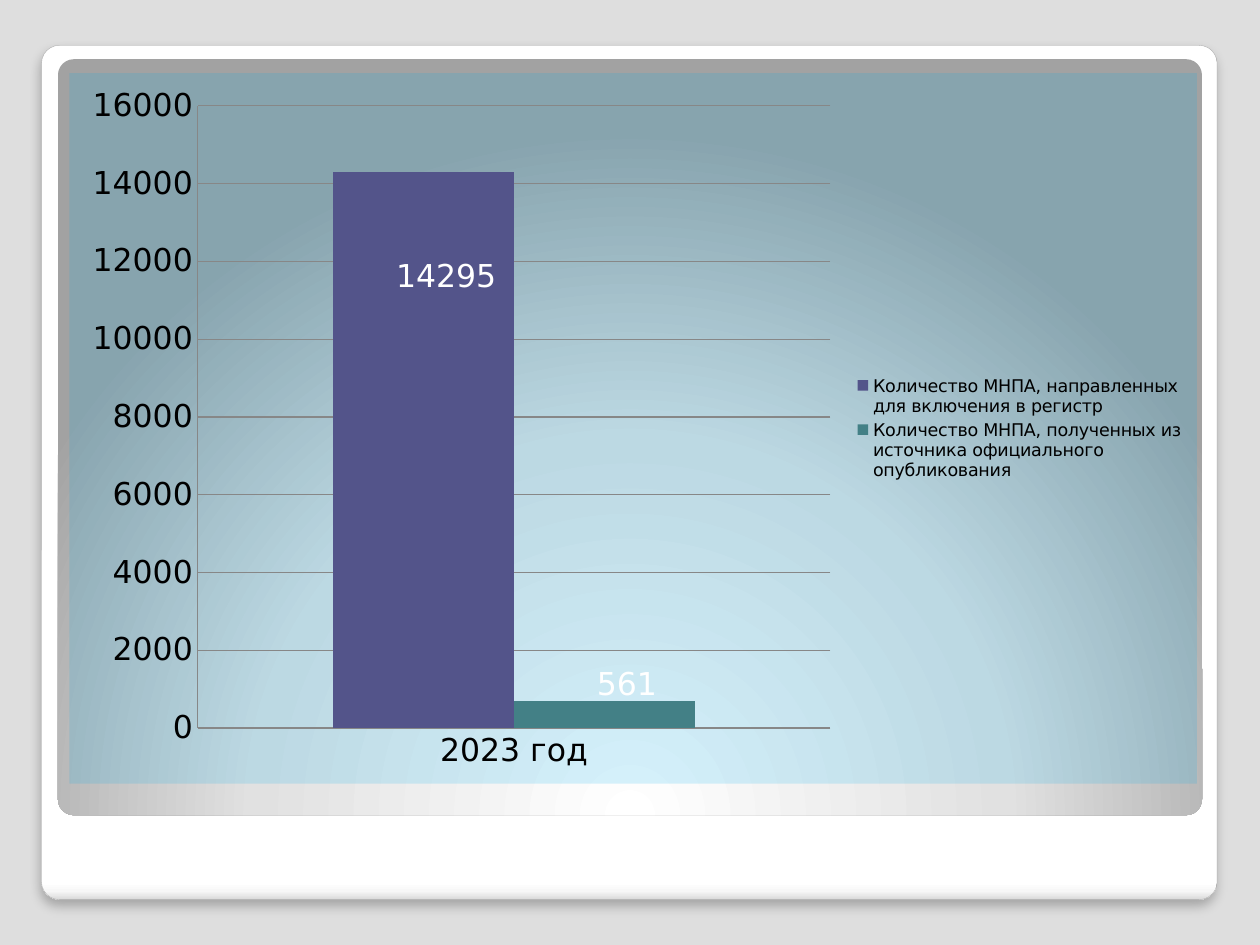
"""Build a slide with a framed column chart of municipal legal acts in 2023."""
from dataclasses import dataclass

from lxml.etree import SubElement
from pptx import Presentation
from pptx.chart.data import CategoryChartData
from pptx.dml.color import RGBColor
from pptx.enum.chart import XL_CHART_TYPE, XL_LABEL_POSITION, XL_LEGEND_POSITION, XL_TICK_MARK
from pptx.enum.shapes import MSO_SHAPE
from pptx.oxml import parse_xml
from pptx.oxml.ns import nsdecls, qn
from pptx.util import Inches, Pt


@dataclass(frozen=True)
class Theme:
    """Colours, font and type sizes of the slide."""
    font: str = "DejaVu Sans"
    background: str = "DEDEDE"
    border: str = "A4A4A4"
    text: str = "000000"
    label: str = "FFFFFF"
    grid: str = "878787"
    tint: str = "00B0F0"
    size: int = 18
    legend_size: int = 10
    card: tuple = ((0, "FFFFFF"), (98, "FFFFFF"), (99, "F7F7F7"), (100, "DADADA"))
    panel: tuple = ((0, "FFFFFF"), (55, "E1E1E1"), (100, "A2A2A2"))


THEME = Theme()
LINEAR = '<a:lin ang="5400000" scaled="0"/>'
RADIAL = '<a:path path="circle"><a:fillToRect l="50000" t="175000" r="50000" b="-75000"/></a:path>'
CHART_BOX = (0.55, 0.58, 8.95, 5.64)
PLOT_BOX = (1.02, 0.26, 5.02, 4.94)
LEGEND_BOX = (6.2, 2.37, 2.68, 0.9)
SERIES = (
    ("Количество МНПА, направленных для включения в регистр", 14295, "53548A", "14295", (0.02, 0.18)),
    ("Количество МНПА, полученных из источника официального опубликования", 690, "438086", "561", (0.02, 0.01)),
)


def rgb(color):
    """Turn a hex string into a colour."""
    return RGBColor.from_string(color)


def style_font(font, size, color):
    """Apply the theme typeface with a size and colour."""
    font.name = THEME.font
    font.size = Pt(size)
    font.color.rgb = rgb(color)


def add_frame(slide, box, stops, direction):
    """Add a rounded rectangle with a gradient and no outline."""
    sp = slide.shapes.add_shape(MSO_SHAPE.ROUNDED_RECTANGLE, *map(Inches, box))
    sp.adjustments[0] = 0.021
    sp.shadow.inherit = False
    sp.line.fill.background()
    sp.fill.background()
    marks = "".join(
        f'<a:gs pos="{pos * 1000}"><a:srgbClr val="{color}"/></a:gs>' for pos, color in stops
    )
    props = sp._element.spPr
    props.replace(
        props.find(qn("a:noFill")),
        parse_xml(f'<a:gradFill {nsdecls("a")}><a:gsLst>{marks}</a:gsLst>{direction}</a:gradFill>'),
    )
    return sp


def add_shadow(sp):
    """Give a shape a soft shadow below it."""
    effects = sp._element.spPr.find(qn("a:effectLst"))
    effects.append(parse_xml(
        f'<a:outerShdw {nsdecls("a")} blurRad="{Pt(6)}" dist="{Pt(4)}" dir="5400000" '
        'algn="tl" rotWithShape="0"><a:srgbClr val="000000"><a:alpha val="25000"/>'
        '</a:srgbClr></a:outerShdw>'
    ))


def set_layout(parent, index, **values):
    """Place a chart part by fractions of the chart area."""
    for old in parent.findall(qn("c:layout")):
        parent.remove(old)
    layout = parse_xml(f'<c:layout {nsdecls("c")}/>')
    manual = SubElement(layout, qn("c:manualLayout"))
    for tag, value in values.items():
        SubElement(manual, qn(f"c:{tag}"), val=str(value))
    parent.insert(index, layout)


def place_part(parent, index, box, **target):
    """Place a chart part by a box in inches within the chart."""
    fractions = (length / CHART_BOX[2 + i % 2] for i, length in enumerate(box))
    set_layout(parent, index, **target, xMode="edge", yMode="edge", **dict(zip("xywh", fractions)))


def tint_chart(chart):
    """Fill the chart area with a translucent colour."""
    chart._chartSpace.find(qn("c:chart")).addnext(parse_xml(
        f'<c:spPr {nsdecls("c", "a")}><a:solidFill><a:srgbClr val="{THEME.tint}">'
        '<a:alpha val="16000"/></a:srgbClr></a:solidFill><a:ln><a:noFill/></a:ln></c:spPr>'
    ))


def style_axes(chart):
    """Style both axes and the gridlines."""
    value_axis = chart.value_axis
    value_axis.minimum_scale, value_axis.maximum_scale, value_axis.major_unit = 0, 16000, 2000
    value_axis.has_major_gridlines = True
    for axis in (chart.category_axis, value_axis):
        axis.major_tick_mark = XL_TICK_MARK.NONE
        axis.minor_tick_mark = XL_TICK_MARK.NONE
        style_font(axis.tick_labels.font, THEME.size, THEME.text)
    for part in (chart.category_axis, value_axis, value_axis.major_gridlines):
        part.format.line.color.rgb = rgb(THEME.grid)
        part.format.line.width = Pt(0.75)


def style_series(series, color, label, offset):
    """Colour a series and put a shifted label on its column."""
    series.format.fill.solid()
    series.format.fill.fore_color.rgb = rgb(color)
    series.invert_if_negative = False
    series.data_labels.show_value = True
    style_font(series.data_labels.font, THEME.size, THEME.label)
    data_label = series.points[0].data_label
    r = data_label.text_frame.paragraphs[0].add_run()
    r.text = label
    style_font(r.font, THEME.size, THEME.label)
    data_label.position = XL_LABEL_POSITION.OUTSIDE_END
    dx, dy = offset
    set_layout(series._element.find(f".//{qn('c:dLbl')}"), 1, x=dx, y=dy)
    for leader in series._element.iter(qn("c:showLeaderLines")):
        leader.set("val", "0")


def add_legend(chart):
    """Add the legend at the right."""
    chart.has_legend = True
    legend = chart.legend
    legend.position = XL_LEGEND_POSITION.RIGHT
    legend.include_in_layout = False
    style_font(legend.font, THEME.legend_size, THEME.text)
    place_part(legend._element, 1, LEGEND_BOX)


def add_column_chart(slide):
    """Add the clustered column chart."""
    data = CategoryChartData()
    data.categories = ["2023 год"]
    for name, value, *_ in SERIES:
        data.add_series(name, [value])
    chart = slide.shapes.add_chart(
        XL_CHART_TYPE.COLUMN_CLUSTERED, *map(Inches, CHART_BOX), data
    ).chart
    chart.has_title = False
    style_font(chart.font, THEME.size, THEME.text)
    tint_chart(chart)
    style_axes(chart)
    plot = chart.plots[0]
    plot.gap_width = 150
    plot.overlap = 0
    plot.vary_by_categories = False
    for series, (_, _, color, label, offset) in zip(plot.series, SERIES):
        style_series(series, color, label, offset)
    add_legend(chart)
    plot_area = chart._chartSpace.find(f".//{qn('c:plotArea')}")
    place_part(plot_area, 0, PLOT_BOX, layoutTarget="inner")


def main():
    """Build and save the slide."""
    prs = Presentation()
    prs.slide_width, prs.slide_height = Inches(10), Inches(7.5)
    s = prs.slides.add_slide(prs.slide_layouts[6])
    s.background.fill.solid()
    s.background.fill.fore_color.rgb = rgb(THEME.background)
    card = add_frame(s, (0.33, 0.36, 9.33, 6.78), THEME.card, LINEAR)
    card.line.color.rgb = rgb(THEME.border)
    card.line.width = Pt(0.16)
    add_shadow(card)
    add_frame(s, (0.46, 0.47, 9.08, 6), THEME.panel, RADIAL)
    add_column_chart(s)
    prs.save("out.pptx")


if __name__ == "__main__":
    main()
